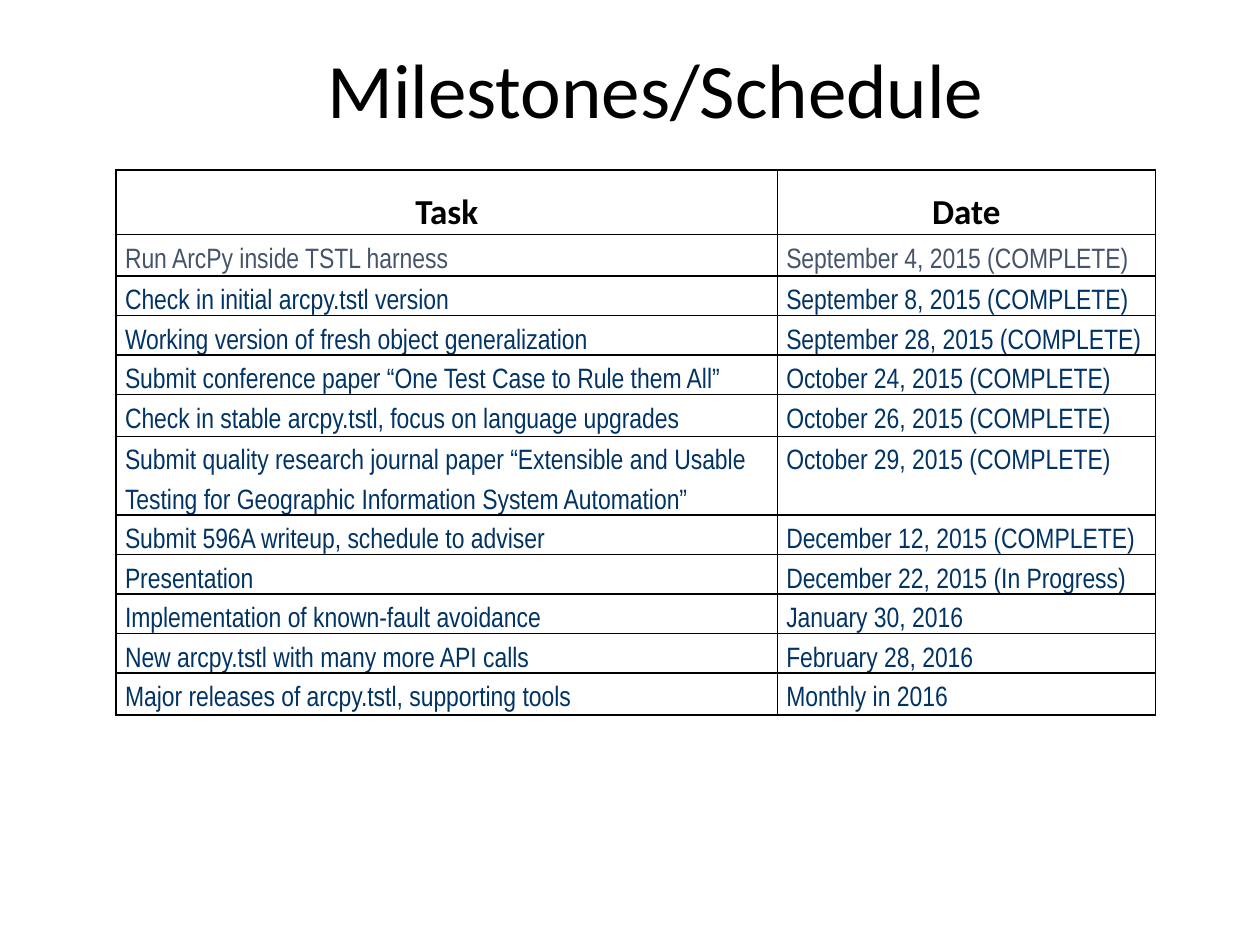
from lxml.etree import SubElement
from pptx import Presentation
from pptx.dml.color import RGBColor
from pptx.enum.text import MSO_ANCHOR, PP_ALIGN
from pptx.oxml.ns import qn
from pptx.util import Cm, Pt

BLACK = RGBColor(0x00, 0x00, 0x00)
SLATE = RGBColor(0x44, 0x54, 0x6A)
NAVY = RGBColor(0x00, 0x33, 0x66)

COLUMN_WIDTHS = [13.33, 7.62]
HEADER = ("Task", "Date", 1.27)
# Task, date, minimum row height in cm
MILESTONES = [
    ("Run ArcPy inside TSTL harness", "September 4, 2015 (COMPLETE)", 0.84),
    ("Check in initial arcpy.tstl version", "September 8, 2015 (COMPLETE)", 0.64),
    ("Working version of fresh object generalization", "September 28, 2015 (COMPLETE)", 0.38),
    ("Submit conference paper “One Test Case to Rule them All”", "October 24, 2015 (COMPLETE)", 0.38),
    ("Check in stable arcpy.tstl, focus on language upgrades", "October 26, 2015 (COMPLETE)", 0.84),
    ("Submit quality research journal paper “Extensible and Usable Testing for "
     "Geographic Information System Automation”", "October 29, 2015 (COMPLETE)", 0.84),
    ("Submit 596A writeup, schedule to adviser", "December 12, 2015 (COMPLETE)", 0.2),
    ("Presentation", "December 22, 2015 (In Progress)", 0.2),
    ("Implementation of known-fault avoidance", "January 30, 2016", 0.58),
    ("New arcpy.tstl with many more API calls", "February 28, 2016", 0.58),
    ("Major releases of arcpy.tstl, supporting tools", "Monthly in 2016", 0.84),
]


def format_font(font, name, size, color, bold=False):
    font.name = name
    font.size = Pt(size)
    font.bold = bold
    font.color.rgb = color


def add_borders(cell, color, width):
    properties = cell._tc.get_or_add_tcPr()
    for side in ("lnL", "lnR", "lnT", "lnB"):
        border = SubElement(properties, qn(f"a:{side}"), w=str(Pt(width)))
        border_fill = SubElement(border, qn("a:solidFill"))
        SubElement(border_fill, qn("a:srgbClr"), val=str(color))


def place_title(slide, left, top, width, height):
    title = slide.shapes.title
    title.left, title.top, title.width, title.height = left, top, width, height
    frame = title.text_frame
    frame.text = "Milestones/Schedule"
    frame.vertical_anchor = MSO_ANCHOR.MIDDLE
    heading = frame.paragraphs[0]
    heading.alignment = PP_ALIGN.CENTER
    format_font(heading.runs[0].font, "Calibri", 44, BLACK)


def fill_cell(cell, text, row_number):
    cell.margin_left = cell.margin_right = Cm(0.18)
    cell.margin_top = cell.margin_bottom = 0
    add_borders(cell, BLACK, 1)
    cell.fill.background()
    cell.text_frame.text = text
    entry = cell.text_frame.paragraphs[0]
    entry.line_spacing = 1.5
    font = entry.runs[0].font
    if row_number == 0:
        entry.alignment = PP_ALIGN.CENTER
        format_font(font, "Calibri", 20, BLACK, bold=True)
    else:
        entry.alignment = PP_ALIGN.LEFT
        format_font(font, "Arial Narrow", 16, SLATE if row_number == 1 else NAVY)


def add_schedule(slide, left, top, width, height):
    entries = [HEADER, *MILESTONES]
    frame = slide.shapes.add_table(len(entries), len(COLUMN_WIDTHS), left, top, width, height)
    schedule = frame.table
    schedule.first_row = schedule.horz_banding = False
    for column, column_width in zip(schedule.columns, COLUMN_WIDTHS):
        column.width = Cm(column_width)
    for row_number, (task, date, row_height) in enumerate(entries):
        schedule.rows[row_number].height = Cm(row_height)
        for column_number, text in enumerate((task, date)):
            fill_cell(schedule.cell(row_number, column_number), text, row_number)
    # Row heights are minimums, so the frame keeps its own height
    frame.height = height


def main():
    presentation = Presentation()
    presentation.slide_width, presentation.slide_height = Cm(25.4), Cm(19.05)
    title_only = presentation.slide_layouts[5]
    slide = presentation.slides.add_slide(title_only)
    place_title(slide, Cm(1.12), Cm(0.69), Cm(24.2), Cm(2.16))
    add_schedule(slide, Cm(2.34), Cm(3.43), Cm(20.95), Cm(13.46))
    presentation.save("out.pptx")


if __name__ == "__main__":
    main()
